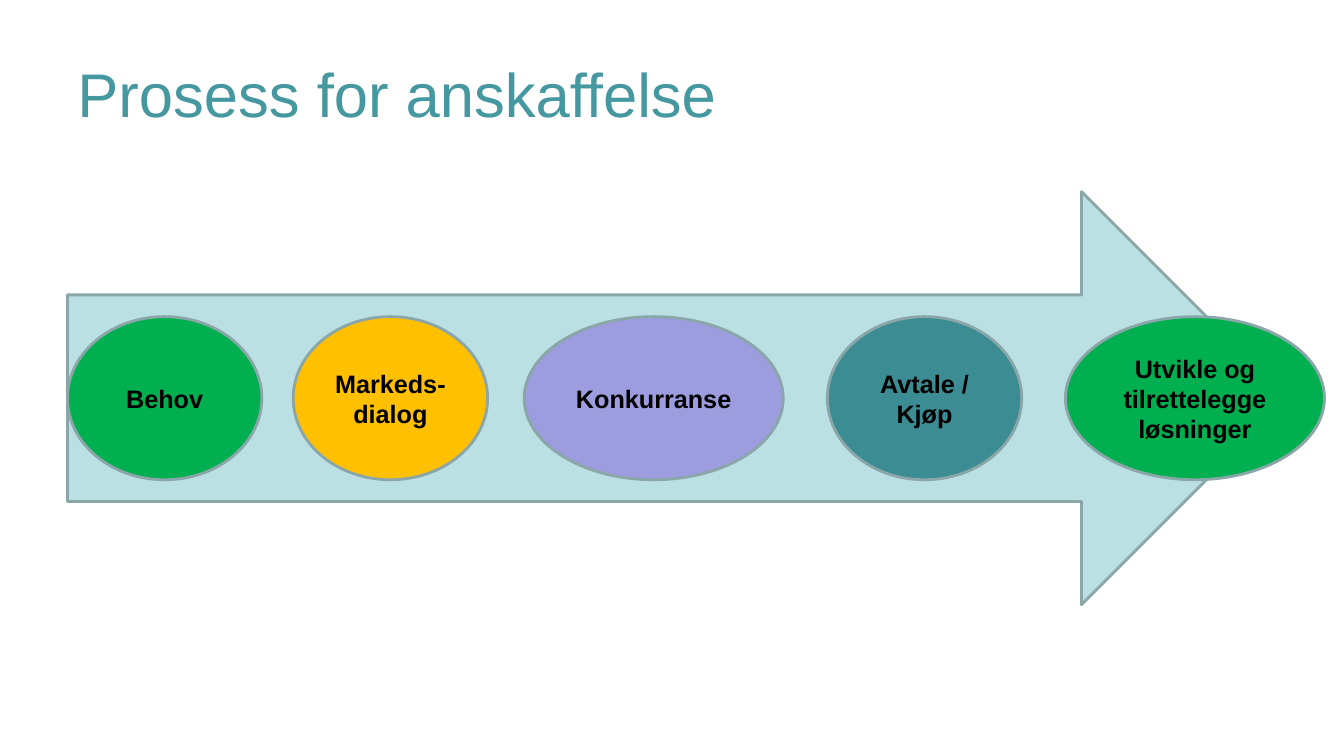
from dataclasses import dataclass

from pptx import Presentation
from pptx.dml.color import RGBColor
from pptx.enum.shapes import MSO_SHAPE as SHAPE
from pptx.enum.text import MSO_ANCHOR as ANCHOR, PP_ALIGN as ALIGN
from pptx.util import Cm, Pt


@dataclass(frozen=True)
class Theme:
    font: str = "Arial"
    title_size: int = 44
    step_size: int = 18
    line_width: int = 2
    title: str = "4597A0"
    text: str = "000000"
    outline: str = "8AA6A8"
    arrow: str = "BBE0E3"
    green: str = "00B050"
    amber: str = "FFC000"
    violet: str = "9C9CDF"
    teal: str = "3C8C93"


THEME = Theme()

# Step geometry in cm
STEP_TOP, STEP_HEIGHT = 7.98, 4.11
NARROW, WIDE = 4.9, 6.53

# Text, left edge, width, fill
STEPS = [
    ("Behov", 1.7, NARROW, THEME.green),
    ("Markeds-dialog", 7.39, NARROW, THEME.amber),
    ("Konkurranse", 13.21, WIDE, THEME.violet),
    ("Avtale / Kjøp", 20.85, NARROW, THEME.teal),
    ("Utvikle og tilrettelegge løsninger", 26.85, WIDE, THEME.green),
]


def set_text(shape, text, size, color, bold=False, align=ALIGN.LEFT):
    tf = shape.text_frame
    tf.word_wrap = True
    tf.vertical_anchor = ANCHOR.MIDDLE
    tf.text = text
    p = tf.paragraphs[0]
    p.alignment = align
    font = p.runs[0].font
    font.name, font.size, font.bold = THEME.font, Pt(size), bold
    font.color.rgb = RGBColor.from_string(color)


def add_title(s, text):
    box = s.shapes.add_textbox(Cm(1.7), Cm(0.76), Cm(30.48), Cm(3.18))
    set_text(box, text, THEME.title_size, THEME.title)


def add_outlined(s, kind, left, top, width, height, fill):
    sp = s.shapes.add_shape(kind, Cm(left), Cm(top), Cm(width), Cm(height))
    sp.shadow.inherit = False
    sp.fill.solid()
    sp.fill.fore_color.rgb = RGBColor.from_string(fill)
    sp.line.color.rgb = RGBColor.from_string(THEME.outline)
    sp.line.width = Pt(THEME.line_width)
    return sp


def add_step(s, text, left, width, fill):
    sp = add_outlined(s, SHAPE.FLOWCHART_CONNECTOR, left, STEP_TOP,
                      width, STEP_HEIGHT, fill)
    set_text(sp, text, THEME.step_size, THEME.text, True, ALIGN.CENTER)


def main():
    prs = Presentation()
    prs.slide_width, prs.slide_height = Cm(33.87), Cm(19.05)
    s = prs.slides.add_slide(prs.slide_layouts[6])

    # Heading
    add_title(s, "Prosess for anskaffelse")

    # Process arrow with its steps
    add_outlined(s, SHAPE.RIGHT_ARROW, 1.7, 4.83, 30.76, 10.41, THEME.arrow)
    for step in STEPS:
        add_step(s, *step)

    prs.save("out.pptx")


if __name__ == "__main__":
    main()
